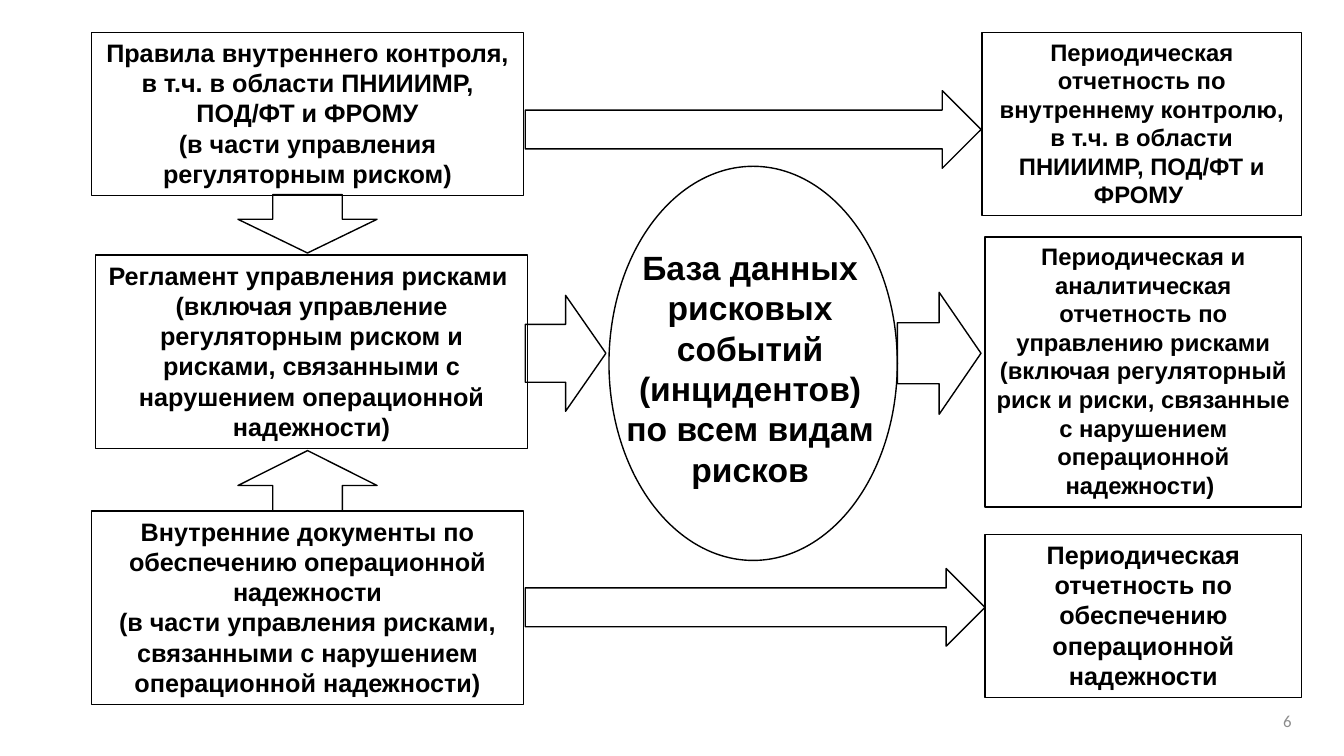
from pptx import Presentation
from pptx.dml.color import RGBColor
from pptx.enum.shapes import MSO_SHAPE
from pptx.enum.text import MSO_ANCHOR, MSO_AUTO_SIZE, PP_ALIGN
from pptx.util import Inches, Pt

COLORS = {"ink": "000000", "page": "8C8C8C"}

# left, top, width, height, text size, paragraphs
BOXES = [
    (0.91, 0.32, 4.28, 1.62, 18, [
        "Правила внутреннего контроля, в т.ч. в области ПНИИИМР, ПОД/ФТ и ФРОМУ",
        "(в части управления регуляторным риском)"]),
    (0.95, 2.53, 4.28, 1.92, 18, [
        "Регламент управления рисками ",
        "(включая управление регуляторным риском и рисками, связанными "
        "с нарушением операционной надежности)"]),
    (0.91, 5.07, 4.28, 1.92, 18, [
        "Внутренние документы по обеспечению операционной надежности",
        "(в части управления рисками, связанными с нарушением "
        "операционной надежности)"]),
    (9.74, 0.32, 3.17, 1.82, 17, [
        "Периодическая отчетность по внутреннему контролю, в т.ч. в области "
        "ПНИИИМР, ПОД/ФТ и ФРОМУ "]),
    (9.77, 2.35, 3.14, 2.68, 17, [
        "Периодическая и аналитическая отчетность по управлению рисками",
        "(включая регуляторный риск и риски, связанные с нарушением "
        "операционной надежности) "]),
    (9.77, 5.3, 3.14, 1.62, 18, [
        "Периодическая отчетность по обеспечению операционной надежности"]),
]

# left, top, width, height
RIGHT_ARROWS = [
    (5.21, 0.9, 4.52, 0.77),
    (5.21, 2.93, 0.8, 1.15),
    (8.9, 2.9, 0.83, 1.21),
    (5.21, 5.64, 4.56, 0.77),
]

# top, height, rotation
DOWN_ARROWS = [(1.93, 0.58, 0), (4.47, 0.6, 180)]


def add_outline(slide, kind, *place):
    """Add an unfilled preset shape with a thin black line."""
    shape = slide.shapes.add_shape(kind, *map(Inches, place))
    shape.shadow.inherit = False
    shape.fill.background()
    shape.line.color.rgb = RGBColor.from_string(COLORS["ink"])
    shape.line.width = Pt(1)
    return shape


def write(shape, lines, size, font="Arial", color="ink", bold=True,
          align=PP_ALIGN.CENTER, anchor=MSO_ANCHOR.TOP):
    frame = shape.text_frame
    frame.word_wrap = True
    frame.auto_size = MSO_AUTO_SIZE.NONE
    frame.vertical_anchor = anchor
    for i, line in enumerate(lines):
        para = frame.add_paragraph() if i else frame.paragraphs[0]
        para.alignment = align
        run = para.add_run()
        run.text = line
        run.font.name = font
        run.font.size = Pt(size)
        run.font.bold = bold
        run.font.color.rgb = RGBColor.from_string(COLORS[color])


def add_label(slide, place, lines, size, **style):
    write(slide.shapes.add_textbox(*map(Inches, place)), lines, size, **style)


def add_down(slide, top, height, turn):
    arrow = add_outline(slide, MSO_SHAPE.DOWN_ARROW, 2.36, top, 1.38, height)
    arrow.adjustments[1] = 0.577
    arrow.rotation = turn


def main():
    deck = Presentation()
    deck.slide_width, deck.slide_height = Inches(13.33), Inches(7.5)
    slide = deck.slides.add_slide(deck.slide_layouts[6])

    for *place, size, lines in BOXES:
        write(add_outline(slide, MSO_SHAPE.RECTANGLE, *place), lines, size)
    for arrow in DOWN_ARROWS:
        add_down(slide, *arrow)
    add_outline(slide, MSO_SHAPE.OVAL, 6.04, 1.65, 2.86, 3.91)
    add_label(slide, (6.01, 2.4, 2.86, 2.52), [
        "База данных рисковых событий (инцидентов) по всем видам рисков"], 24)
    for place in RIGHT_ARROWS:
        add_outline(slide, MSO_SHAPE.RIGHT_ARROW, *place)
    add_label(slide, (9.42, 6.95, 3.49, 0.4), ["6"], 12, font="Calibri",
              color="page", bold=False, align=PP_ALIGN.RIGHT,
              anchor=MSO_ANCHOR.MIDDLE)

    deck.save("out.pptx")


if __name__ == "__main__":
    main()
